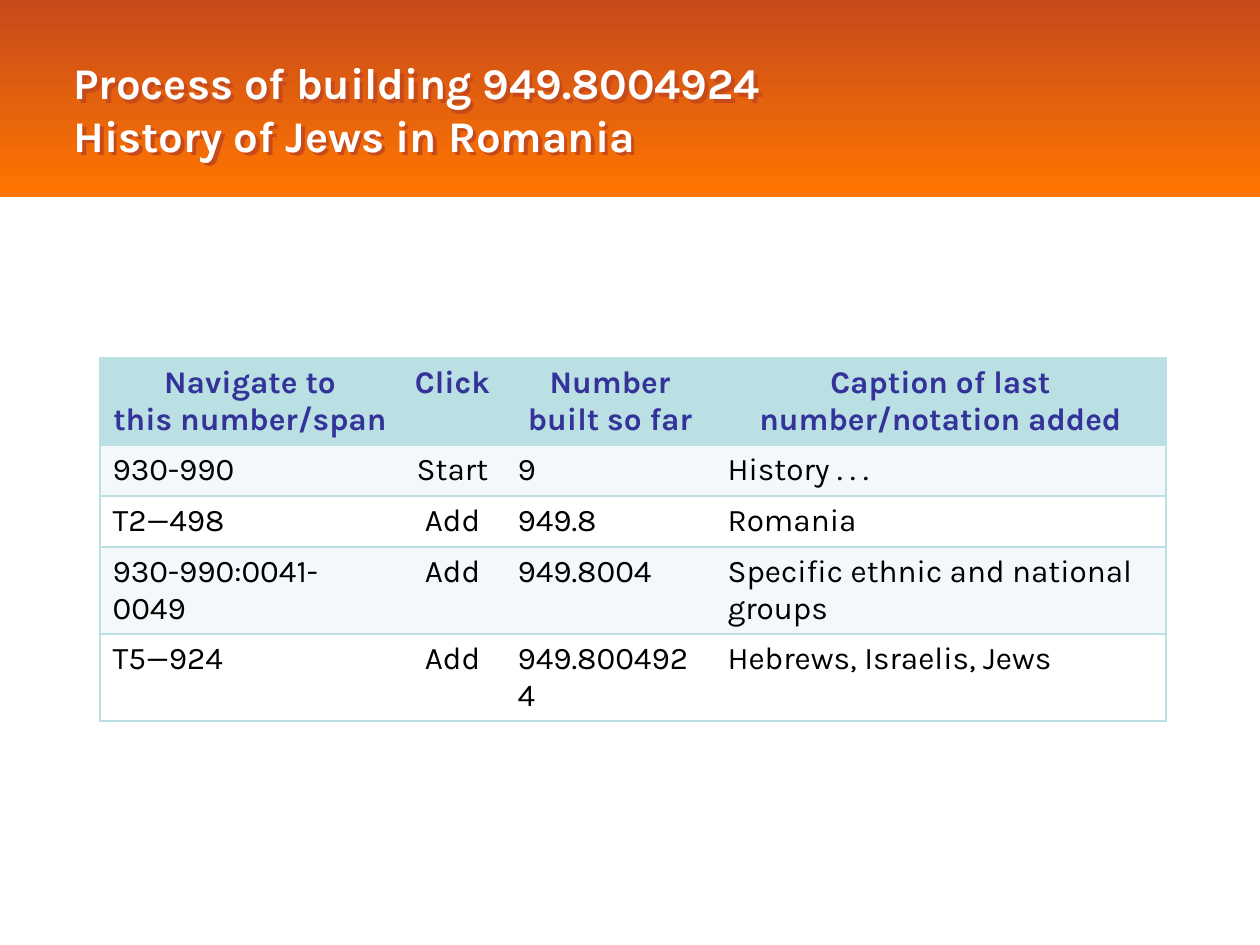
from dataclasses import dataclass

from lxml import etree
from pptx import Presentation
from pptx.dml.color import RGBColor
from pptx.enum.shapes import MSO_SHAPE
from pptx.enum.text import MSO_ANCHOR, MSO_AUTO_SIZE, PP_ALIGN
from pptx.oxml.ns import qn
from pptx.util import Emu, Pt

RECT = MSO_SHAPE.RECTANGLE
LEFT, CENTER = PP_ALIGN.LEFT, PP_ALIGN.CENTER
MIDDLE = MSO_ANCHOR.MIDDLE
NO_FIT = MSO_AUTO_SIZE.NONE
FONT = "Karla"
COLORS = {
    "rust": "C74A1B",
    "orange": "FF7600",
    "white": "FFFFFF",
    "teal": "BBE0E3",
    "pale": "F3F9FA",
    "navy": "333399",
    "black": "000000",
}


@dataclass
class Row:
    height: int
    fill: str
    cells: tuple[str, ...]


COLS = (300, 105, 210, 451)
HEAD = Row(87, "teal", (
    "Navigate to\nthis number/span",
    "Click",
    "Number built so far",
    "Caption of last number/notation added",
))
STEPS = (
    Row(51, "pale", ("930-990", "Start", "9", "History . . .")),
    Row(51, "white", ("T2—498", "Add", "949.8", "Romania")),
    Row(87, "pale", ("930-990:0041-0049", "Add", "949.8004",
                     "Specific ethnic and national groups")),
    Row(87, "white", ("T5—924", "Add", "949.8004924",
                      "Hebrews, Israelis, Jews")),
)


def px(count: int) -> Emu:
    return Emu(round(count * 914400 / 126))


def rgb(name: str) -> RGBColor:
    return RGBColor.from_string(COLORS[name])


def write(para, text: str, *, size: int = 18, color: str = "black",
          bold: bool = False, align=LEFT) -> None:
    para.text = text
    para.alignment = align
    for run in para.runs:
        font = run.font
        font.name = FONT
        font.size = Pt(size)
        font.bold = bold
        font.color.rgb = rgb(color)


def edge(cell, side: str, shown: bool) -> None:
    props = cell._tc.get_or_add_tcPr()
    line = etree.SubElement(props, qn(f"a:ln{side}"), w=str(Pt(1)))
    if shown:
        fill = etree.SubElement(line, qn("a:solidFill"))
        etree.SubElement(fill, qn("a:srgbClr"), val=COLORS["teal"])
    else:
        etree.SubElement(line, qn("a:noFill"))


def shade(shape, color: str) -> None:
    effects = etree.SubElement(shape.element.spPr, qn("a:effectLst"))
    shadow = etree.SubElement(effects, qn("a:outerShdw"), dist="35921",
                              dir="2700000", algn="ctr", rotWithShape="0")
    etree.SubElement(shadow, qn("a:srgbClr"), val=COLORS[color])


def draw_title(slide) -> None:
    band = slide.shapes.add_shape(RECT, 0, 0, px(1260), px(197))
    band.shadow.inherit = False
    band.line.fill.background()
    band.fill.gradient()
    band.fill.gradient_angle = 270
    for stop, color, place in zip(band.fill.gradient_stops,
                                  ("rust", "orange"), (0, 1)):
        stop.color.rgb = rgb(color)
        stop.position = place

    title = slide.shapes.title
    title.left, title.top = px(61), px(20)
    title.width, title.height = px(962), px(177)
    title.element.addprevious(band.element)
    title.fill.background()
    shade(title, "rust")
    frame = title.text_frame
    frame.word_wrap = True
    frame.auto_size = NO_FIT
    frame.vertical_anchor = MIDDLE
    write(frame.paragraphs[0],
          "Process of building 949.8004924\nHistory of Jews in Romania",
          size=25, color="white", bold=True)


def draw_table(slide, rows: tuple[Row, ...]) -> None:
    table = slide.shapes.add_table(
        len(rows), len(COLS), px(100), px(358), px(sum(COLS)),
        px(sum(row.height for row in rows))).table
    table.first_row = False
    table.horz_banding = False
    for col, width in zip(table.columns, COLS):
        col.width = px(width)
    for y, row in enumerate(rows):
        table.rows[y].height = px(row.height)
        head = row is HEAD
        for x, text in enumerate(row.cells):
            cell = table.cell(y, x)
            edge(cell, "L", x == 0)
            edge(cell, "R", x == len(COLS) - 1)
            edge(cell, "T", True)
            edge(cell, "B", True)
            cell.fill.solid()
            cell.fill.fore_color.rgb = rgb(row.fill)
            frame = cell.text_frame
            for i, part in enumerate(text.split("\n")):
                para = frame.add_paragraph() if i else frame.paragraphs[0]
                write(para, part, color="navy" if head else "black",
                      bold=head, align=CENTER if head or x == 1 else LEFT)


def main() -> None:
    deck = Presentation()
    deck.slide_width, deck.slide_height = px(1260), px(945)
    slide = deck.slides.add_slide(deck.slide_layouts[5])
    draw_title(slide)
    draw_table(slide, (HEAD, *STEPS))
    deck.save("out.pptx")


if __name__ == "__main__":
    main()
